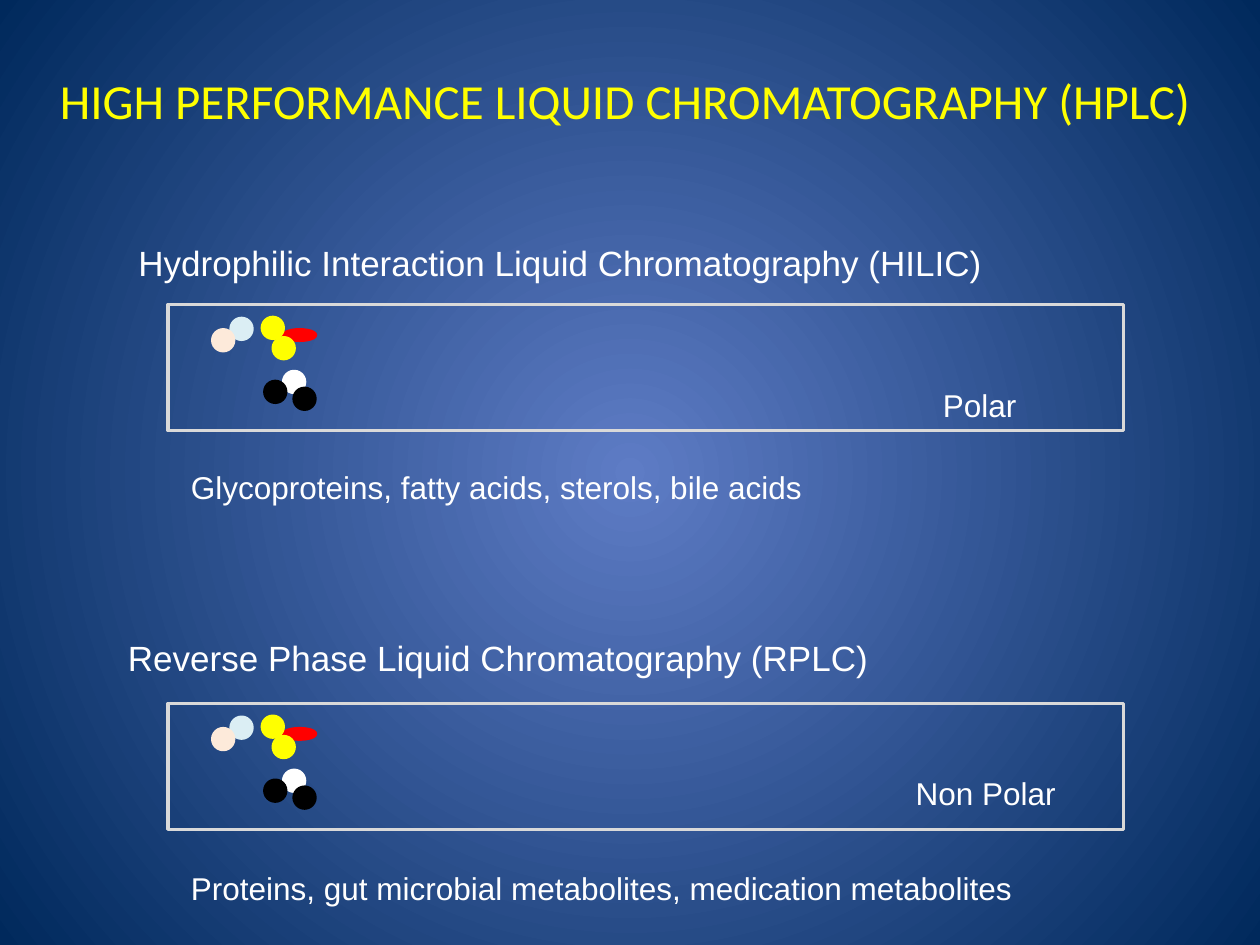
from dataclasses import dataclass

from pptx import Presentation
from pptx.dml.color import RGBColor
from pptx.enum.shapes import MSO_SHAPE
from pptx.enum.text import MSO_ANCHOR, PP_ALIGN
from pptx.oxml import parse_xml
from pptx.oxml.ns import nsdecls
from pptx.util import Cm, Pt


@dataclass(frozen=True)
class Theme:
    glow: str = "5E7CC5"
    navy: str = "00295C"
    title: str = "FFFF00"
    text: str = "FFFFFF"
    frame: str = "D9D9D9"
    title_font: str = "Calibri"
    body_font: str = "Arial"
    title_size: int = 28
    heading_size: int = 20
    body_size: int = 18
    line_width: int = 2


THEME = Theme()
DOT = 0.42

# Molecules, back to front: left and top within the column, width, height, colour
MOLECULES = [
    (1.27, 0.28, DOT, DOT, "DBEEF4"),
    (2.33, 0.51, 0.64, 0.21, "FF0000"),
    (1.90, 0.26, DOT, DOT, "FFFF00"),
    (0.90, 0.51, DOT, DOT, "FDEADA"),
    (2.12, 0.67, DOT, DOT, "FFFF00"),
    (2.33, 1.35, DOT, DOT, "FFFFFF"),
    (1.95, 1.55, DOT, DOT, "000000"),
    (2.54, 1.69, DOT, DOT, "000000"),
]

COLUMN_LEFT, COLUMN_WIDTH, COLUMN_HEIGHT = 3.39, 19.26, 2.54

# Each label: text, then left, top and width relative to its column
SECTIONS = [
    (6.14,
     ("Hydrophilic Interaction Liquid Chromatography (HILIC)", -0.85, -1.39, 19.38),
     ("Polar", 15.37, 1.51, 3.18),
     ("Glycoproteins, fatty acids, sterols, bile acids", 0.21, 3.18, 19.47)),
    (14.18,
     ("Reverse Phase Liquid Chromatography (RPLC)", -1.06, -1.48, 18.63),
     ("Non Polar", 14.82, 1.30, 3.81),
     ("Proteins, gut microbial metabolites, medication metabolites", 0.21, 3.22, 19.47)),
]


def paint_background(page):
    page.element.cSld.insert(0, parse_xml(
        f'<p:bg {nsdecls("p", "a")}><p:bgPr><a:gradFill rotWithShape="1"><a:gsLst>'
        f'<a:gs pos="0"><a:srgbClr val="{THEME.glow}"/></a:gs>'
        f'<a:gs pos="100000"><a:srgbClr val="{THEME.navy}"/></a:gs></a:gsLst>'
        '<a:path path="circle"><a:fillToRect l="50000" t="50000" r="50000" b="50000"/>'
        '</a:path></a:gradFill><a:effectLst/></p:bgPr></p:bg>'))


def add_text(page, text, left, top, width, height, size, font, color):
    box = page.shapes.add_textbox(Cm(left), Cm(top), Cm(width), Cm(height))
    frame = box.text_frame
    frame.word_wrap = True
    frame.text = text
    span = frame.paragraphs[0].runs[0]
    span.font.size = Pt(size)
    span.font.name = font
    span.font.color.rgb = RGBColor.from_string(color)
    return frame


def add_outlined(page, kind, left, top, width, height, line, fill=None):
    shape = page.shapes.add_shape(kind, Cm(left), Cm(top), Cm(width), Cm(height))
    shape.shadow.inherit = False
    if fill:
        shape.fill.solid()
        shape.fill.fore_color.rgb = RGBColor.from_string(fill)
    else:
        shape.fill.background()
    shape.line.color.rgb = RGBColor.from_string(line)
    shape.line.width = Pt(THEME.line_width)


def add_title(page, left, top, width, height):
    frame = add_text(page, "HIGH PERFORMANCE LIQUID CHROMATOGRAPHY (HPLC)",
                     left, top, width, height,
                     THEME.title_size, THEME.title_font, THEME.title)
    frame.vertical_anchor = MSO_ANCHOR.MIDDLE
    frame.paragraphs[0].alignment = PP_ALIGN.CENTER


def add_section(page, left, top, width, height, heading, phase, analytes):
    # Column with its molecules
    for x, y, dot_width, dot_height, color in MOLECULES:
        add_outlined(page, MSO_SHAPE.OVAL, left + x, top + y,
                     dot_width, dot_height, color, color)
    add_outlined(page, MSO_SHAPE.RECTANGLE, left, top, width, height, THEME.frame)

    # Heading, phase label and analytes
    for label, size, label_height in ((heading, THEME.heading_size, 1.11),
                                      (phase, THEME.body_size, 1.03),
                                      (analytes, THEME.body_size, 1.03)):
        text, x, y, label_width = label
        add_text(page, text, left + x, top + y, label_width, label_height,
                 size, THEME.body_font, THEME.text)


def main():
    deck = Presentation()
    deck.slide_width, deck.slide_height = Cm(25.4), Cm(19.05)
    page = deck.slides.add_slide(deck.slide_layouts[6])
    paint_background(page)
    add_title(page, -1.48, 0.43, 28.15, 3.18)
    for top, *labels in SECTIONS:
        add_section(page, COLUMN_LEFT, top, COLUMN_WIDTH, COLUMN_HEIGHT, *labels)
    deck.save("out.pptx")


if __name__ == "__main__":
    main()
